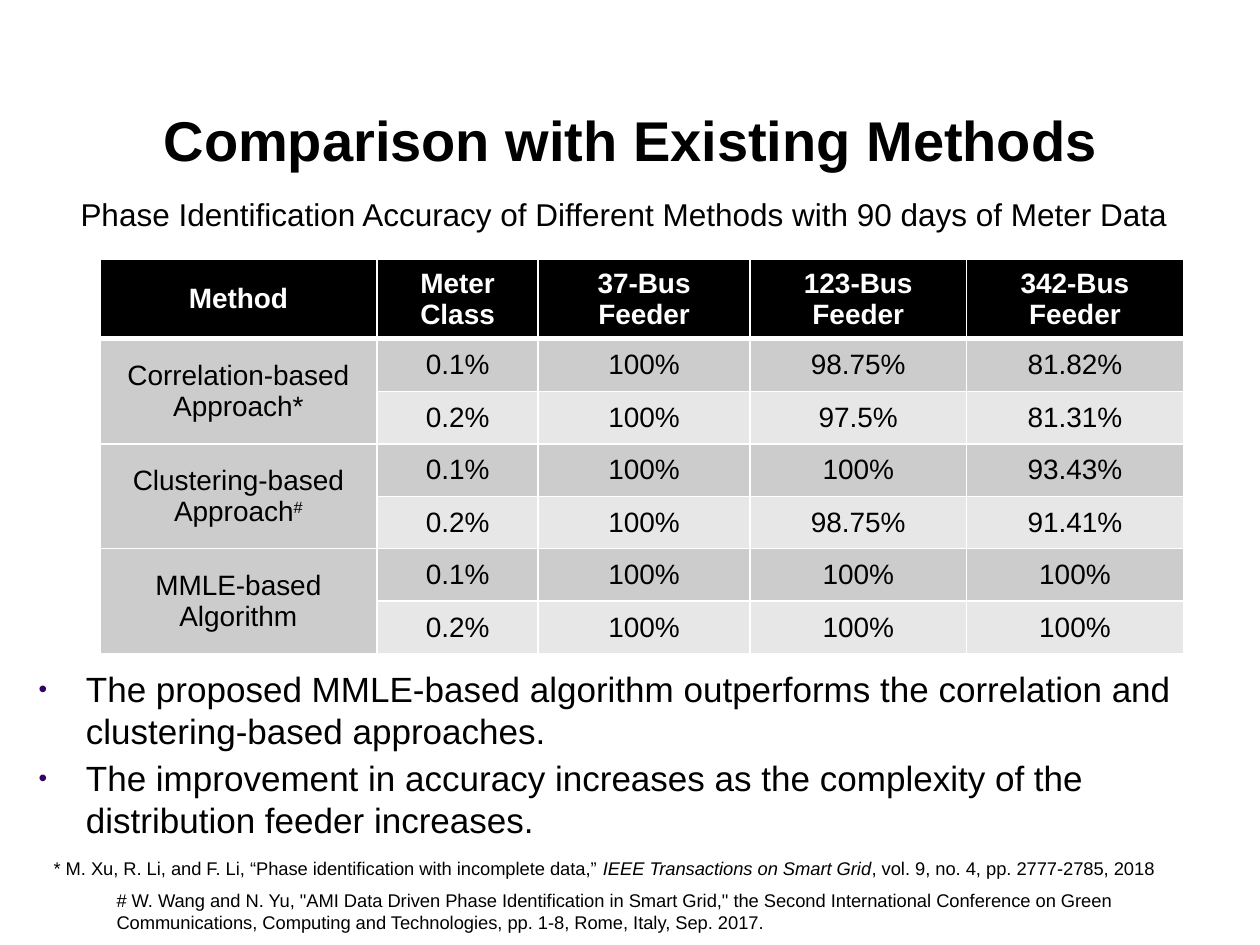
from dataclasses import dataclass

from lxml import etree
from pptx import Presentation
from pptx.dml.color import RGBColor
from pptx.enum.text import MSO_ANCHOR, MSO_AUTO_SIZE, PP_ALIGN
from pptx.oxml.ns import qn
from pptx.util import Pt

LEFT, CENTER = PP_ALIGN.LEFT, PP_ALIGN.CENTER
TOP, MIDDLE, BOTTOM = MSO_ANCHOR.TOP, MSO_ANCHOR.MIDDLE, MSO_ANCHOR.BOTTOM
FIT_SHAPE = MSO_AUTO_SIZE.SHAPE_TO_FIT_TEXT


@dataclass(frozen=True)
class Theme:
    font: str = "Arial"
    black: str = "000000"
    white: str = "FFFFFF"
    dark_band: str = "CCCCCC"
    light_band: str = "E7E7E7"
    bullet: str = "330066"
    title_size: float = 32
    body_size: float = 20
    caption_size: float = 18
    table_size: float = 16
    note_size: float = 10.5


THEME = Theme()

COLUMN_WIDTHS = (158.4, 92.16, 120.96, 123.84, 123.84)
HEADER_HEIGHT, ROW_HEIGHT = 45, 30
HEADERS = ("Method", "Meter Class", "37-Bus Feeder", "123-Bus Feeder", "342-Bus Feeder")
# Each method has one row of results per meter class
RESULTS = (
    ("Correlation-based Approach*", "", (
        ("0.1%", "100%", "98.75%", "81.82%"),
        ("0.2%", "100%", "97.5%", "81.31%"))),
    ("Clustering-based Approach", "#", (
        ("0.1%", "100%", "100%", "93.43%"),
        ("0.2%", "100%", "98.75%", "91.41%"))),
    ("MMLE-based Algorithm", "", (
        ("0.1%", "100%", "100%", "100%"),
        ("0.2%", "100%", "100%", "100%"))),
)
FINDINGS = (
    "The proposed MMLE-based algorithm outperforms the correlation and "
    "clustering-based approaches.",
    "The improvement in accuracy increases as the complexity of the "
    "distribution feeder increases.",
)


def add_text(paragraph, text, size, color=THEME.black, bold=False, italic=False,
             superscript=False, align=LEFT):
    """Append one formatted run to a paragraph."""
    paragraph.alignment = align
    run = paragraph.add_run()
    run.text = text
    font = run.font
    font.name, font.size = THEME.font, Pt(size)
    font.bold, font.italic = bold, italic
    font.color.rgb = RGBColor.from_string(color)
    if superscript:
        run._r.get_or_add_rPr().set("baseline", "30000")


def add_text_box(slide, left, top, width, height, anchor=TOP):
    shape = slide.shapes.add_textbox(Pt(left), Pt(top), Pt(width), Pt(height))
    frame = shape.text_frame
    frame.word_wrap = True
    frame.vertical_anchor = anchor
    return frame


def set_bullet(paragraph, indent):
    properties = paragraph._p.get_or_add_pPr()
    properties.set("marL", str(Pt(indent)))
    properties.set("indent", str(-Pt(indent)))
    color = etree.SubElement(properties, qn("a:buClr"))
    etree.SubElement(color, qn("a:srgbClr"), val=THEME.bullet)
    etree.SubElement(properties, qn("a:buSzPct"), val="70000")
    etree.SubElement(properties, qn("a:buFont"), typeface=THEME.font)
    etree.SubElement(properties, qn("a:buChar"), char="•")


def style_cell(cell, fill, top=1, bottom=1):
    """Set white borders, fill and anchor; borders come before the fill."""
    properties = cell._tc.get_or_add_tcPr()
    for side, width in (("L", 1), ("R", 1), ("T", top), ("B", bottom)):
        line = etree.SubElement(properties, qn(f"a:ln{side}"), w=str(Pt(width)))
        solid = etree.SubElement(line, qn("a:solidFill"))
        etree.SubElement(solid, qn("a:srgbClr"), val=THEME.white)
    cell.fill.solid()
    cell.fill.fore_color.rgb = RGBColor.from_string(fill)
    cell.vertical_anchor = MIDDLE


def add_accuracy_table(slide, left, top):
    row_count = 1 + sum(len(rows) for _, _, rows in RESULTS)
    height = HEADER_HEIGHT + ROW_HEIGHT * (row_count - 1)
    table = slide.shapes.add_table(
        row_count, len(HEADERS), Pt(left), Pt(top),
        Pt(sum(COLUMN_WIDTHS)), Pt(height)).table
    for column, width in zip(table.columns, COLUMN_WIDTHS):
        column.width = Pt(width)
    for index, row in enumerate(table.rows):
        row.height = Pt(ROW_HEIGHT if index else HEADER_HEIGHT)

    # Header row
    for column, header in enumerate(HEADERS):
        cell = table.cell(0, column)
        style_cell(cell, THEME.black, bottom=3)
        add_text(cell.text_frame.paragraphs[0], header, THEME.table_size,
                 color=THEME.white, bold=True, align=CENTER)

    # Result rows, with the method cell merged down each group
    row = 1
    for method, mark, rows in RESULTS:
        method_cell = table.cell(row, 0)
        method_cell.merge(table.cell(row + len(rows) - 1, 0))
        paragraph = method_cell.text_frame.paragraphs[0]
        add_text(paragraph, method, THEME.table_size, align=CENTER)
        if mark:
            add_text(paragraph, mark, THEME.table_size, superscript=True, align=CENTER)
        for values in rows:
            top_border = 3 if row == 1 else 1
            band = THEME.dark_band if row % 2 else THEME.light_band
            style_cell(table.cell(row, 0), THEME.dark_band, top=top_border)
            for column, value in enumerate(values, start=1):
                cell = table.cell(row, column)
                style_cell(cell, band, top=top_border)
                add_text(cell.text_frame.paragraphs[0], value, THEME.table_size, align=CENTER)
            row += 1


def add_findings(slide):
    frame = add_text_box(slide, 15, 378, 697, 108)
    for index, finding in enumerate(FINDINGS):
        paragraph = frame.add_paragraph() if index else frame.paragraphs[0]
        set_bullet(paragraph, 27)
        if index:
            paragraph.space_before = Pt(3)
        add_text(paragraph, finding, THEME.body_size)


def add_references(slide):
    frame = add_text_box(slide, 23.5, 486, 685, 52)
    frame.auto_size = FIT_SHAPE
    first = frame.paragraphs[0]
    add_text(first, "* M. Xu, R. Li, and F. Li, “Phase identification with incomplete data,” ",
             THEME.note_size)
    add_text(first, "IEEE Transactions on Smart Grid", THEME.note_size, italic=True)
    add_text(first, ", vol. 9, no. 4, pp. 2777-2785, 2018", THEME.note_size)
    second = frame.add_paragraph()
    second.level = 1
    second.space_before = second.space_after = Pt(6)
    add_text(second, '# W. Wang and N. Yu, "AMI Data Driven Phase Identification in Smart Grid," '
             "the Second International Conference on Green Communications, Computing and "
             "Technologies, pp. 1-8, Rome, Italy, Sep. 2017.", THEME.note_size)


def main():
    presentation = Presentation()
    presentation.slide_width, presentation.slide_height = Pt(720), Pt(540)
    slide = presentation.slides.add_slide(presentation.slide_layouts[6])

    # Title and table caption
    title = add_text_box(slide, 9, 60, 703, 42, anchor=BOTTOM)
    add_text(title.paragraphs[0], "Comparison with Existing Methods",
             THEME.title_size, bold=True, align=CENTER)
    caption = add_text_box(slide, 23.5, 108, 666, 34)
    add_text(caption.paragraphs[0],
             "Phase Identification Accuracy of Different Methods with 90 days of Meter Data",
             THEME.caption_size, align=CENTER)

    # Results, findings and references
    add_accuracy_table(slide, 57, 148)
    add_findings(slide)
    add_references(slide)
    presentation.save("out.pptx")


if __name__ == "__main__":
    main()
